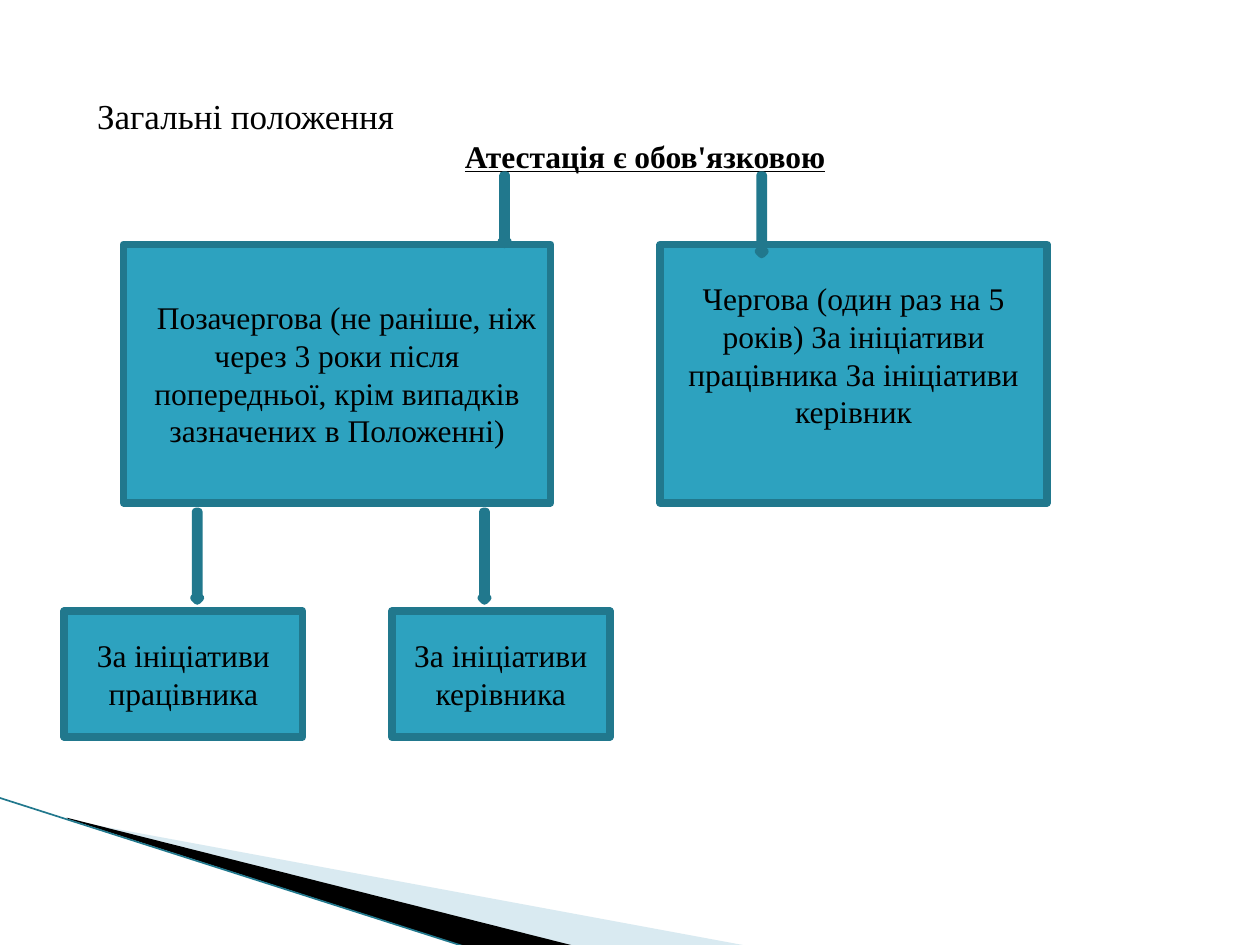
from lxml.etree import SubElement
from pptx import Presentation
from pptx.dml.color import RGBColor
from pptx.enum.shapes import MSO_CONNECTOR as Conn, MSO_SHAPE as Kind
from pptx.enum.text import MSO_ANCHOR as Anchor, PP_ALIGN as Align
from pptx.oxml.ns import qn
from pptx.util import Inches, Pt

TEAL = RGBColor(0x2D, 0xA2, 0xBF)
EDGE = RGBColor(0x21, 0x78, 0x8D)
PALE = RGBColor(0xA0, 0xCB, 0xDC)
BLACK = RGBColor(0, 0, 0)
FONT = "Times New Roman"

deck = Presentation()
deck.slide_width, deck.slide_height = Inches(10), Inches(7.5)
slide = deck.slides.add_slide(deck.slide_layouts[1])
shapes = slide.shapes


def add_block(kind, left, top, width, height):
    block = shapes.add_shape(kind, Inches(left), Inches(top), Inches(width), Inches(height))
    block.shadow.inherit = False
    block.fill.solid()
    block.fill.fore_color.rgb = TEAL
    block.line.color.rgb = EDGE
    block.line.width = Pt(4.33)
    return block


def style(para, size, align):
    para.alignment = align
    para.space_before = Pt(0)
    for run in para.runs:
        run.font.name, run.font.size = FONT, Pt(size)
        run.font.color.rgb = BLACK


# Corner wedges
wedges = [
    (PALE, [(0.55, 6.51), (5.95, 7.51), (4.56, 7.51), (0.55, 6.5)]),
    (BLACK, [(0.53, 6.49), (4.57, 7.51), (3.72, 7.52), (0.54, 6.5)]),
]
for color, points in wedges:
    dots = [(Inches(x), Inches(y)) for x, y in points]
    pen = shapes.build_freeform(*dots[0])
    pen.add_line_segments(dots[1:], close=True)
    wedge = pen.convert_to_shape()
    wedge.shadow.inherit = False
    wedge.fill.solid()
    wedge.fill.fore_color.rgb = color
    wedge.line.fill.background()
    if color == PALE:
        tint = wedge.fill._xPr.find(qn("a:solidFill"))[0]
        SubElement(tint, qn("a:alpha"), val="40000")

# Corner line
line = shapes.add_connector(Conn.STRAIGHT, Inches(-0.01), Inches(6.33), Inches(3.71), Inches(7.52))
line.line.color.rgb = EDGE
line.line.width = Pt(0.95)
SubElement(line._element.spPr, qn("a:effectLst"))

# Heading and subheading
title = shapes.title
title._element.getparent().remove(title._element)
body = slide.placeholders[1]
body.left, body.top = Inches(0.67), Inches(0.7)
body.width, body.height = Inches(8.9), Inches(4.64)
frame = body.text_frame
frame.text = "Загальні положення\nАтестація є обов'язковою"
for para, size, align in zip(frame.paragraphs, (20, 18), (Align.LEFT, Align.CENTER)):
    props = para._p.get_or_add_pPr()
    props.set("marL", "0")
    props.set("indent", "0")
    SubElement(props, qn("a:buNone"))
    style(para, size, align)
font = frame.paragraphs[1].runs[0].font
font.bold = font.underline = True

# Boxes: left, top, width, height, first-line indent, bottom margin, text
boxes = [
    (0.98, 1.94, 3.39, 2.05, 0.15, 0.05,
     "Позачергова (не раніше, ніж через 3 роки після попередньої, крім випадків зазначених в Положенні)"),
    (5.24, 1.94, 3.07, 2.05, 0, 0.35,
     "Чергова (один раз на 5 років) За ініціативи працівника За ініціативи керівник"),
    (0.51, 4.85, 1.89, 1, 0, 0.05, "За ініціативи працівника"),
    (3.11, 4.85, 1.73, 1, 0, 0.05, "За ініціативи керівника"),
]
# Arrows: left, top, height; the first one ends behind its box
arrows = [(3.98, 1.39, 0.55), (6.02, 1.39, 0.63), (1.54, 4.06, 0.71), (3.82, 4.06, 0.71)]

for left, top, width, height, indent, base, text in boxes:
    frame = add_block(Kind.RECTANGLE, left, top, width, height).text_frame
    frame.word_wrap = True
    frame.vertical_anchor = Anchor.MIDDLE
    frame.margin_bottom = Inches(base)
    frame.text = text
    para = frame.paragraphs[0]
    style(para, 18, Align.CENTER)
    para._p.get_or_add_pPr().set("indent", str(Inches(indent)))

for left, top, height in arrows:
    add_block(Kind.DOWN_ARROW, left, top, 0.05, height)

deck.save("out.pptx")
